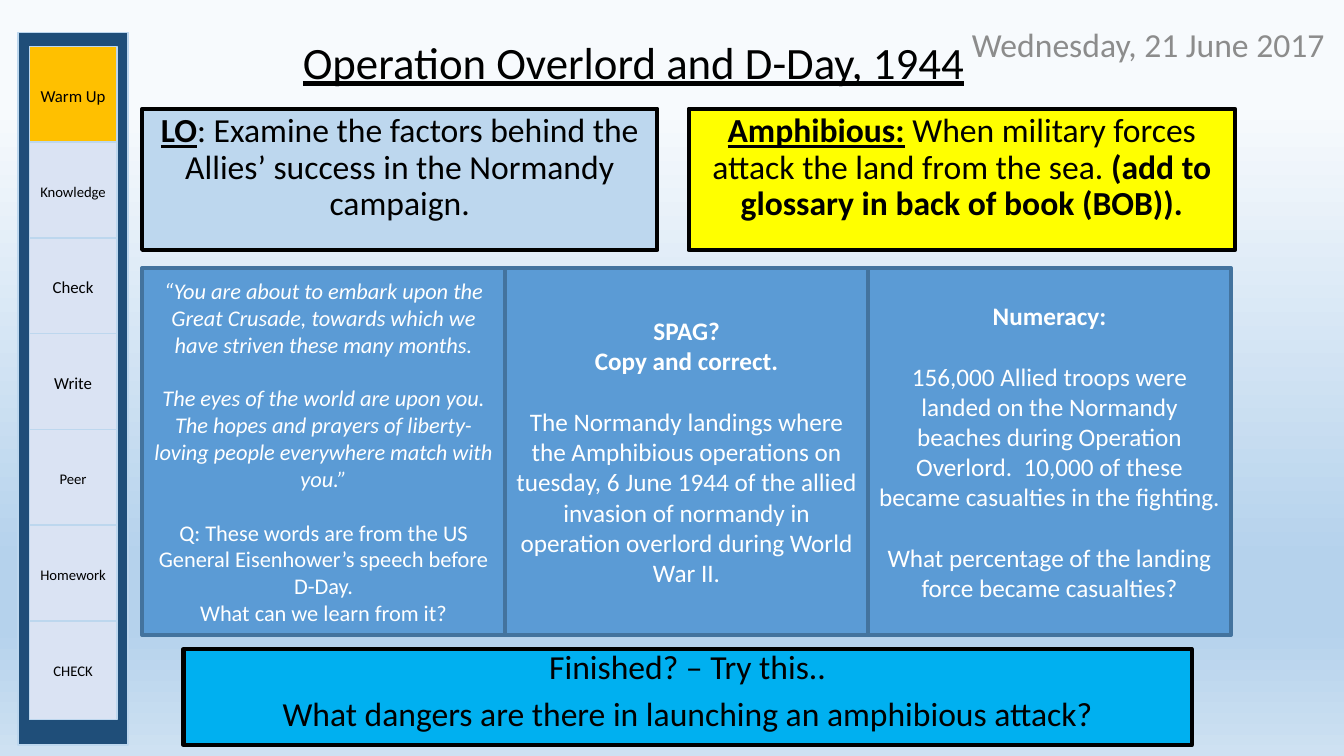
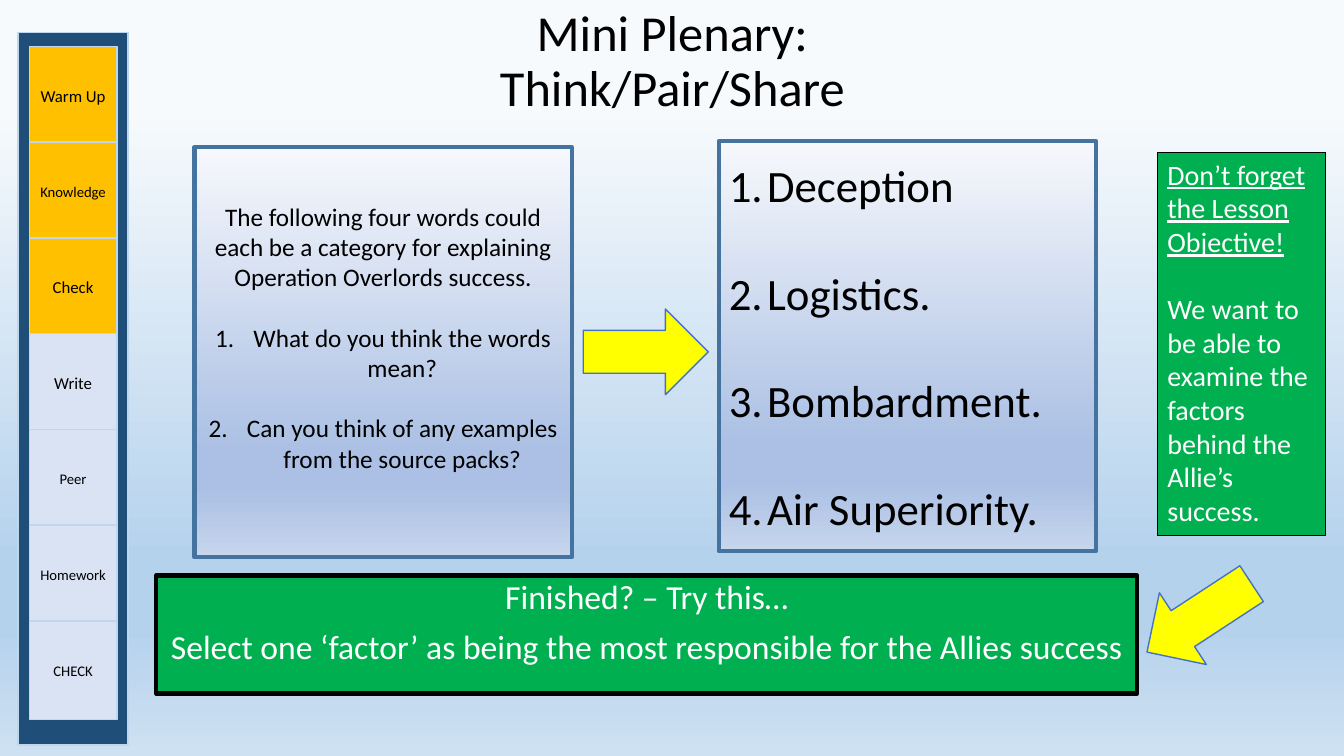
import copy

import lxml.etree
import pptx
import pptx.dml.color
import pptx.enum.shapes
import pptx.enum.text
import pptx.oxml.ns
import pptx.util

Inches = pptx.util.Inches
Pt = pptx.util.Pt
RGB = pptx.dml.color.RGBColor.from_string
SHAPE = pptx.enum.shapes.MSO_SHAPE
ALIGN = pptx.enum.text.PP_ALIGN
ANCHOR = pptx.enum.text.MSO_ANCHOR
qn = pptx.oxml.ns.qn

THEME = {
    "font": "Calibri",
    "black": "000000",
    "white": "FFFFFF",
    "grey": "8C8C8C",
    "navy": "1F4E79",
    "pale_blue": "BDD7EE",
    "task_blue": "5B9BD5",
    "task_edge": "43739E",
    "bright_blue": "00B0F0",
    "arrow_edge": "4472C4",
    "yellow": "FFFF00",
    "green": "00B050",
    "done": "FFC000",
    "todo": "DAE3F3",
    "sky": [(14, "F7FAFD"), (74, "B5D2EC"), (83, "B5D2EC"), (100, "CEE1F2")],
    "haze": [(0, "F6F8FC"), (74, "ABC0E4"), (83, "ABC0E4"), (100, "C7D5ED")],
    "mini_title": 36,
    "title": 32,
    "lead": 24,
    "note": 20,
    "body": 18,
    "quote": 16,
    "stage": 12,
    "small_stage": 10.5,
    "line_height": 1.2,
    "hanging": 0.38,
}

BOLD = {"bold": True}
ITALIC = {"italic": True}
UNDERLINE = {"underline": True}
HEADWORD = {"bold": True, "underline": True}
PLAIN = {}


def paint_gradient(owner, fill, stops):
    fill.gradient()
    fill.gradient_angle = 270
    stop_list = owner.element.xpath(".//a:gsLst")[0]
    while len(stop_list) < len(stops):
        stop_list.append(copy.deepcopy(stop_list[-1]))
    for stop, (position, color) in zip(fill.gradient_stops, stops):
        stop.position = position / 100
        stop.color.rgb = RGB(color)


def add_panel(slide, at, fill=None, edge=None, paragraphs=(), size=18, color="black",
              align=ALIGN.CENTER, anchor=ANCHOR.MIDDLE, spacing=PLAIN,
              kind=SHAPE.RECTANGLE, rotation=0):
    place = [Inches(value) for value in at]
    if fill:
        panel = slide.shapes.add_shape(kind, *place)
        panel.shadow.inherit = False
        panel.rotation = rotation
        if isinstance(THEME[fill], list):
            paint_gradient(panel, panel.fill, THEME[fill])
        else:
            panel.fill.solid()
            panel.fill.fore_color.rgb = RGB(THEME[fill])
        edge_color, edge_width = edge
        panel.line.color.rgb = RGB(THEME[edge_color])
        panel.line.width = Pt(edge_width)
    else:
        panel = slide.shapes.add_textbox(*place)
    frame = panel.text_frame
    frame.word_wrap = True
    frame.vertical_anchor = anchor
    for index, (runs, features) in enumerate(paragraphs):
        paragraph = frame.add_paragraph() if index else frame.paragraphs[0]
        layout = {"alignment": align, **spacing}
        if "gap" in features:
            layout["space_before"] = Pt(size * THEME["line_height"])
        for name, value in layout.items():
            setattr(paragraph, name, value)
        if "number" in features:
            properties = paragraph._p.get_or_add_pPr()
            properties.set("marL", str(Inches(THEME["hanging"])))
            properties.set("indent", str(-Inches(THEME["hanging"])))
            lxml.etree.SubElement(properties, qn("a:buAutoNum"), type="arabicPeriod")
        for text, emphasis in runs:
            run = paragraph.add_run()
            run.text = text
            run.font.color.rgb = RGB(THEME[color])
            font_format = {"name": THEME["font"], "size": Pt(size), **emphasis}
            for name, value in font_format.items():
                setattr(run.font, name, value)
    return panel


presentation = pptx.Presentation()
presentation.slide_width = Inches(13.33)
presentation.slide_height = Inches(7.5)
master = presentation.slide_master
paint_gradient(master, master.background.fill, THEME["sky"])

stages = [
    ("Warm Up", "stage"), ("Knowledge", "small_stage"), ("Check", "stage"),
    ("Write", "stage"), ("Peer", "small_stage"), ("Homework", "small_stage"),
    ("CHECK", "small_stage"),
]
title_style = {"anchor": ANCHOR.BOTTOM, "spacing": {"line_spacing": 0.9}}
lead_style = {
    "size": THEME["lead"], "anchor": ANCHOR.TOP,
    "spacing": {"line_spacing": 0.9, "space_before": Pt(10)},
}
tight_lead_style = {
    **lead_style, "spacing": {"line_spacing": 0.8, "space_before": Pt(10)},
}

lesson_slides = []
for stages_done in (1, 3):
    slide = presentation.slides.add_slide(presentation.slide_layouts[6])
    lesson_slides.append(slide)
    add_panel(slide, (0.18, 0.32, 1.09, 7.07), "navy", ("pale_blue", 1))
    for index, (stage, size) in enumerate(stages):
        add_panel(slide, (0.29, 0.46 + 0.95 * index, 0.87, 0.98),
                  "done" if index < stages_done else "todo", ("pale_blue", 1),
                  [([(stage, PLAIN)], "")], THEME[size])

warm_up, plenary = lesson_slides

add_panel(warm_up, (1.1, -0.08, 10.37, 1.01),
          paragraphs=[([("Operation Overlord and D-Day, 1944", UNDERLINE)], "")],
          size=THEME["title"], **title_style)
add_panel(warm_up, (9.54, 0.14, 3.88, 0.6),
          paragraphs=[([("Wednesday, 21 June 2017", PLAIN)], "")],
          size=THEME["lead"], color="grey", align=ALIGN.LEFT)
add_panel(warm_up, (1.41, 1.08, 5.11, 1.4), "pale_blue", ("black", 3), [
    ([("LO", HEADWORD),
      (": Examine the factors behind the Allies’ success in the Normandy campaign.", PLAIN)], ""),
], **lead_style)
add_panel(warm_up, (6.83, 1.08, 5.42, 1.4), "yellow", ("black", 3), [
    ([("Amphibious:", HEADWORD),
      (" When military forces attack the land from the sea. ", PLAIN),
      ("(add to glossary in back of book (BOB)).", BOLD)], ""),
], **lead_style)

tasks = [
    ("quote", [
        ([("“You are about to embark upon the Great Crusade, towards which we have "
           "striven these many months.", ITALIC)], ""),
        ([("The eyes of the world are upon you. The hopes and prayers of liberty-loving "
           "people everywhere match with you.”", ITALIC)], ["gap"]),
        ([("Q: These words are from the US General Eisenhower’s speech before D-Day.",
           PLAIN)], ["gap"]),
        ([("What can we learn from it?", PLAIN)], ""),
    ]),
    ("body", [
        ([("SPAG?", BOLD)], ""),
        ([("Copy and correct.", BOLD)], ""),
        ([("The Normandy landings where the Amphibious operations on tuesday, 6 June 1944 "
           "of the allied invasion of normandy in operation overlord during World War II.",
           PLAIN)], ["gap"]),
    ]),
    ("body", [
        ([("Numeracy:", BOLD)], ""),
        ([("156,000 Allied troops were landed on the Normandy beaches during Operation "
           "Overlord.  10,000 of these became casualties in the fighting.", PLAIN)], ["gap"]),
        ([("What percentage of the landing force became casualties?", PLAIN)], ["gap"]),
    ]),
]
for index, (size, paragraphs) in enumerate(tasks):
    add_panel(warm_up, (1.41 + 3.6 * index, 2.66, 3.6, 3.64), "task_blue",
              ("task_edge", 3), paragraphs, THEME[size], "white")

add_panel(warm_up, (1.82, 6.44, 10, 0.95), "bright_blue", ("black", 3), [
    ([("Finished? – Try this..", PLAIN)], ""),
    ([("What dangers are there in launching an amphibious attack?", PLAIN)], ""),
], **tight_lead_style)

add_panel(plenary, (1.67, 0.52, 10, 0.69), paragraphs=[
    ([("Mini Plenary:", PLAIN)], ""),
    ([("Think/Pair/Share", PLAIN)], ""),
], size=THEME["mini_title"], **title_style)

questions = add_panel(plenary, (1.93, 1.46, 3.74, 4.07), "haze", ("task_edge", 3), [
    ([("The following four words could each be a category for explaining Operation "
       "Overlords success.", PLAIN)], ""),
    ([("What do you think the words mean?", PLAIN)], ["gap", "number"]),
    ([("Can you think of any examples from the source packs?", PLAIN)], ["gap", "number"]),
], THEME["body"])
questions.text_frame.margin_bottom = Inches(0.35)

factors = ["Deception", "Logistics.", "Bombardment.", "Air Superiority."]
add_panel(plenary, (7.13, 1.4, 3.74, 4.07), "haze", ("task_edge", 3), [
    ([(factor, PLAIN)], ["gap", "number"] if index else ["number"])
    for index, factor in enumerate(factors)
], THEME["title"], align=ALIGN.LEFT)

add_panel(plenary, (11.48, 1.51, 1.67, 3.8), "green", ("black", 0.75), [
    ([("Don’t forget the Lesson Objective!", UNDERLINE)], ""),
    ([("We want to be able to examine the factors behind the Allie’s success.", PLAIN)], ["gap"]),
], THEME["note"], "white", ALIGN.LEFT, ANCHOR.TOP)

add_panel(plenary, (1.55, 5.71, 9.73, 1.17), "green", ("black", 3), [
    ([("Finished? – Try this…", PLAIN)], ""),
    ([("Select one ‘factor’ as being the most responsible for the Allies success", PLAIN)], ""),
], color="white", **lead_style)

for left, top, rotation in ((5.98, 2.87, 270), (11.47, 5.51, 56.8)):
    add_panel(plenary, (left, top, 0.85, 1.24), "yellow", ("arrow_edge", 1),
              kind=SHAPE.DOWN_ARROW, rotation=rotation)

presentation.save("out.pptx")
